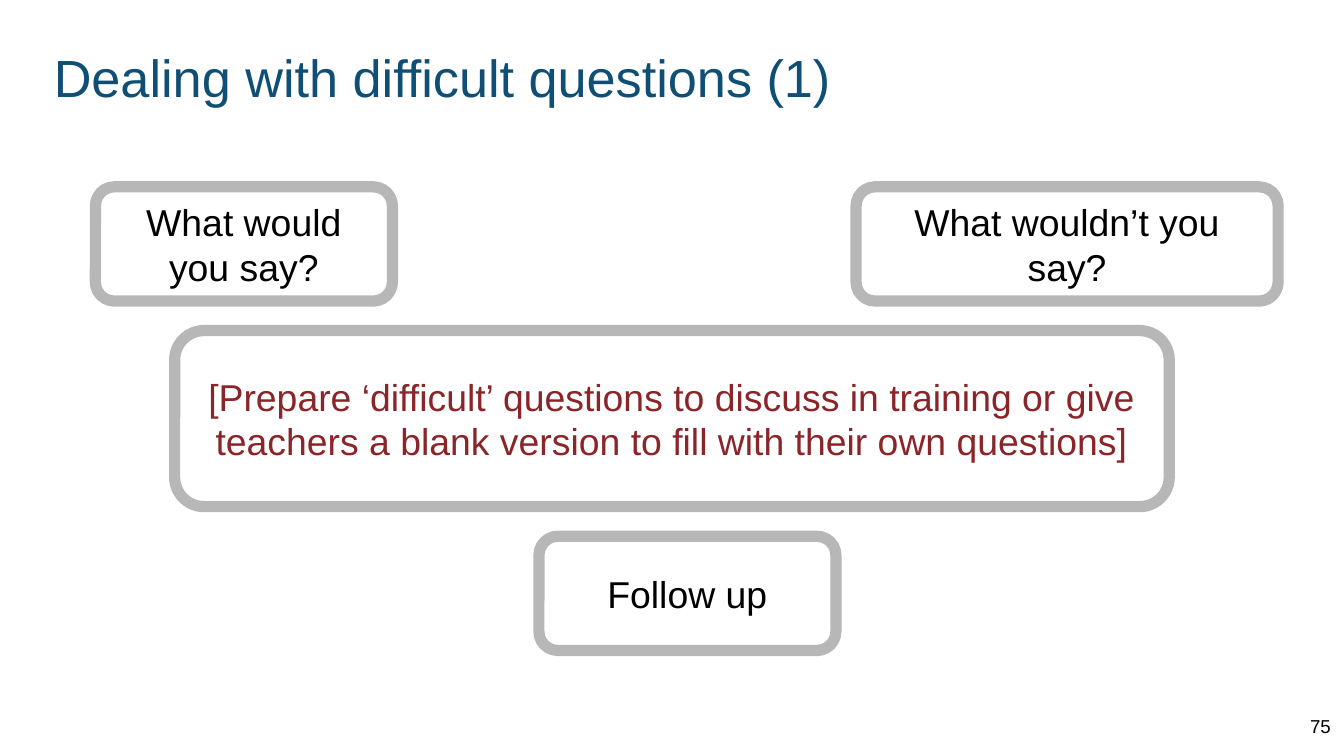
from pptx import Presentation
from pptx.dml.color import RGBColor
from pptx.enum import shapes, text
from pptx.util import Inches, Pt

TITLE = "Dealing with difficult questions (1)"
TITLE_BOX = (0.3, 0.24, 8.48, 0.63)
PAGE_NUMBER = "75"
PAGE_BOX = (9.4, 5.19, 0.6, 0.43)
BLACK, BLUE, RED, GREY = "000000", "104F75", "8A2529", "B7B7B7"
PROMPT_TOP, PROMPT_HEIGHT = 1.39, 0.85
FOLLOW_UP_TOP = 3.99
CARDS = [
    ("[Prepare ‘difficult’ questions to discuss in training or give "
     "teachers a blank version to fill with their own questions]",
     (1.3, 2.46, 7.4, 1.31), RED),
    ("What would you say?", (0.71, PROMPT_TOP, 2.21, PROMPT_HEIGHT), BLACK),
    ("What wouldn’t you say?", (6.37, PROMPT_TOP, 3.14, PROMPT_HEIGHT), BLACK),
    ("Follow up", (4.01, FOLLOW_UP_TOP, 2.21, PROMPT_HEIGHT), BLACK),
]


def color(value):
    return RGBColor.from_string(value)


def write(holder, content, size=20, ink=BLACK, align=text.PP_ALIGN.CENTER,
          anchor=text.MSO_ANCHOR.MIDDLE):
    frame = holder.text_frame
    frame.word_wrap = True
    frame.auto_size = text.MSO_AUTO_SIZE.NONE
    frame.vertical_anchor = anchor
    frame.margin_left = frame.margin_right = Inches(0.1)
    frame.margin_top = frame.margin_bottom = Inches(0.1)
    paragraph = frame.paragraphs[0]
    paragraph.alignment = align
    run = paragraph.add_run()
    run.text = content
    run.font.name = "Arial"
    run.font.size = Pt(size)
    run.font.color.rgb = color(ink)


def add_card(slide, content, box, ink):
    card = slide.shapes.add_shape(shapes.MSO_SHAPE.ROUNDED_RECTANGLE, *map(Inches, box))
    card.shadow.inherit = False
    card.fill.background()
    card.line.color.rgb = color(GREY)
    card.line.width = Pt(6)
    write(card, content, ink=ink)


def main():
    deck = Presentation()
    deck.slide_width = Inches(10)
    deck.slide_height = deck.slide_width * 9 // 16
    slide = deck.slides.add_slide(deck.slide_layouts[5])
    title = slide.shapes.title
    title.left, title.top, title.width, title.height = map(Inches, TITLE_BOX)
    write(title, TITLE, size=28, ink=BLUE, align=text.PP_ALIGN.LEFT,
          anchor=text.MSO_ANCHOR.TOP)
    for content, box, ink in CARDS:
        add_card(slide, content, box, ink)
    page = slide.shapes.add_textbox(*map(Inches, PAGE_BOX))
    write(page, PAGE_NUMBER, size=10, align=text.PP_ALIGN.RIGHT)
    deck.save("out.pptx")


if __name__ == "__main__":
    main()
